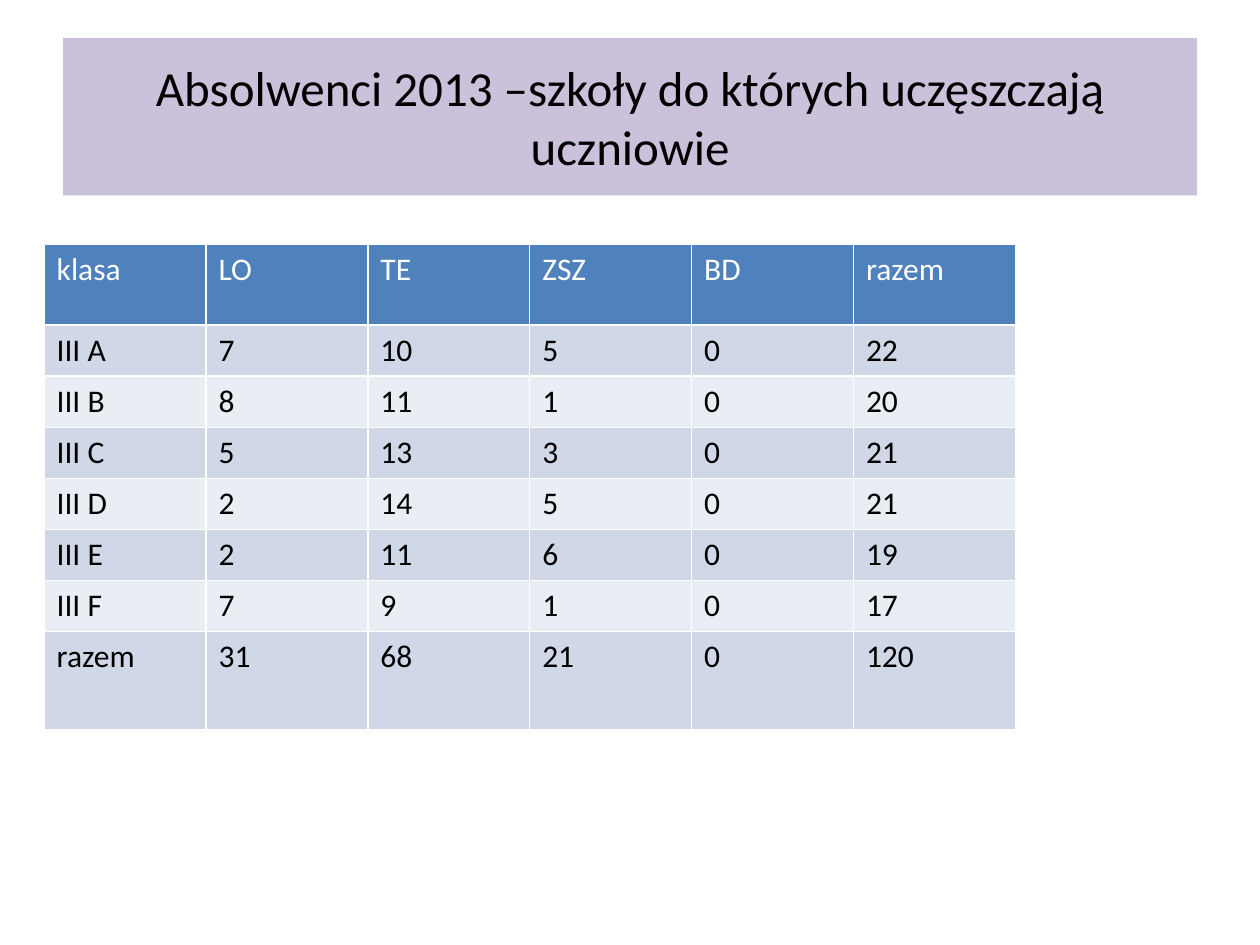
from pptx import Presentation
from pptx.dml.color import RGBColor
from pptx.enum.text import MSO_ANCHOR, PP_ALIGN
from pptx.util import Inches, Pt

LEFT, CENTER = PP_ALIGN.LEFT, PP_ALIGN.CENTER
MIDDLE = MSO_ANCHOR.MIDDLE


def paint(fill, color):
    fill.solid()
    fill.fore_color.rgb = RGBColor.from_string(color)


def write(frame, text, size=18, color="000000", align=LEFT):
    para = frame.paragraphs[0]
    para.alignment = align
    run = para.add_run()
    run.text = text
    font = run.font
    font.name, font.size, font.bold = "Calibri", Pt(size), False
    font.color.rgb = RGBColor.from_string(color)


prs = Presentation()
prs.slide_width, prs.slide_height = Inches(10), Inches(7.5)
slide = prs.slides.add_slide(prs.slide_layouts[5])

# Title band
title = slide.shapes.title
title.left, title.top = Inches(0.5), Inches(0.3)
title.width, title.height = Inches(9), Inches(1.25)
paint(title.fill, "CCC1DA")
title.text_frame.word_wrap = True
title.text_frame.vertical_anchor = MIDDLE
write(title.text_frame, "Absolwenci 2013 –szkoły do których uczęszczają uczniowie",
      size=28, align=CENTER)

# Table of graduates by class and school type
rows = [
    ("klasa", "LO", "TE", "ZSZ", "BD", "razem"),
    ("III A", 7, 10, 5, 0, 22),
    ("III B", 8, 11, 1, 0, 20),
    ("III C", 5, 13, 3, 0, 21),
    ("III D", 2, 14, 5, 0, 21),
    ("III E", 2, 11, 6, 0, 19),
    ("III F", 7, 9, 1, 0, 17),
    ("razem", 31, 68, 21, 0, 120),
]
tall = [0.64] + [0.405] * 6 + [0.78]
table = slide.shapes.add_table(
    len(rows), len(rows[0]), Inches(0.35), Inches(1.94),
    Inches(7.71), Inches(sum(tall))).table
for col in table.columns:
    col.width = Inches(7.71 / len(rows[0]))

# Header in blue, body rows in alternating tints; the style draws white rules
for r, row in enumerate(rows):
    table.rows[r].height = Inches(tall[r])
    band = "4F81BD" if r == 0 else ("E9EDF4", "D0D8E8")[r % 2]
    ink = "FFFFFF" if r == 0 else "000000"
    for c, value in enumerate(row):
        cell = table.cell(r, c)
        paint(cell.fill, band)
        write(cell.text_frame, str(value), color=ink)

prs.save("out.pptx")
